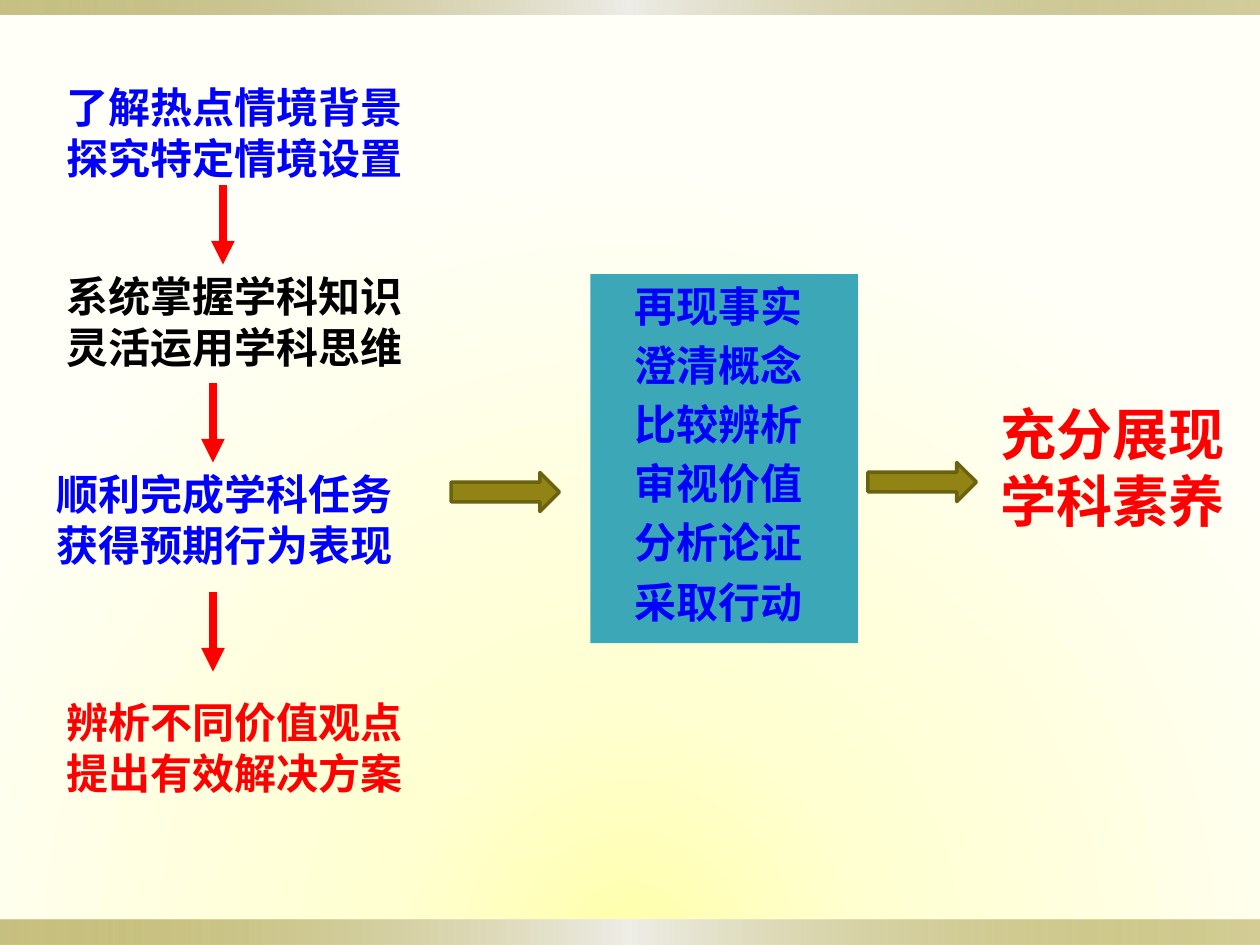
from dataclasses import dataclass
from typing import NamedTuple

from lxml.etree import SubElement
from pptx import Presentation
from pptx.dml.color import RGBColor
from pptx.enum.shapes import MSO_CONNECTOR as Connector, MSO_SHAPE as Shape
from pptx.enum.text import MSO_ANCHOR as Anchor, MSO_AUTO_SIZE as AutoSize, PP_ALIGN as Align
from pptx.oxml.ns import qn
from pptx.util import Pt


@dataclass(frozen=True)
class Theme:
    blue: str = "0000FF"
    red: str = "FF0000"
    black: str = "000000"
    teal: str = "3CA8B7"
    olive: str = "918415"
    dark_olive: str = "6B6210"
    silver: str = "EEEDE8"
    glow: tuple = ("FFFFAC", "FFFFD2", "FFFFF7")
    body: float = 24
    conclusion: float = 32
    font: str = "Arial"
    skill_font: str = "Noto Sans CJK SC"


class Box(NamedTuple):
    left: float
    top: float
    width: float
    height: float

    def lengths(self) -> list:
        return [Pt(value) for value in self]


class Stop(NamedTuple):
    position: int
    color: str
    opacity: int = 100


class Statement(NamedTuple):
    lines: tuple
    box: Box
    color: str
    size: float
    wrap: bool = True


class DownArrow(NamedTuple):
    x: float
    top: float


THEME = Theme()
WIDTH, HEIGHT = 720, 540
DOWN_LENGTH = 45.4

EDGE_BARS = (Box(0, 525.6, WIDTH, 14.4), Box(0, 0, WIDTH, 8.6))
BAR_STOPS = (Stop(0, THEME.olive, 50), Stop(50, THEME.silver), Stop(100, THEME.olive, 40))
GLOW_STOPS = tuple(map(Stop, (0, 31, 100), THEME.glow))
GLOW_CENTER = {"l": 50, "t": 150, "r": 50, "b": 0}

SKILLS = ("再现事实", "澄清概念", "比较辨析", "审视价值", "分析论证", "采取行动")
SKILL_BOX = Box(337.4, 156.7, 152.9, 210.8)

STATEMENTS = (
    Statement(("了解热点情境背景", "探究特定情境设置"),
              Box(31, 43.2, 209.5, 65.5), THEME.blue, THEME.body, False),
    Statement(("系统掌握学科知识", "灵活运用学科思维"),
              Box(31, 151.2, 232.6, 64.8), THEME.black, THEME.body),
    Statement(("顺利完成学科任务", "获得预期行为表现"),
              Box(25.2, 264.3, 215.3, 64.8), THEME.blue, THEME.body),
    Statement(("辨析不同价值观点", "提出有效解决方案"),
              Box(31, 394.6, 209.5, 94.3), THEME.red, THEME.body),
    Statement(("充分展现", "学科素养"),
              Box(564.5, 224.6, 143.3, 84.2), THEME.red, THEME.conclusion, False),
)
DOWN_ARROWS = (DownArrow(127.4, 105.8), DownArrow(121.7, 218.9), DownArrow(121.7, 338.4))
RIGHT_ARROWS = (Box(257.8, 270, 61.9, 22.3), Box(496, 264.3, 61.9, 22.3))


def rgb(color: str) -> RGBColor:
    return RGBColor.from_string(color)


def set_gradient(fill, owner, stops: tuple, center: dict | None = None) -> None:
    fill.gradient()
    gradient = next(owner.iter(qn("a:gradFill")))
    for child in list(gradient):
        gradient.remove(child)
    stop_list = SubElement(gradient, qn("a:gsLst"))
    for stop in stops:
        mark = SubElement(stop_list, qn("a:gs"), pos=str(stop.position * 1000))
        color = SubElement(mark, qn("a:srgbClr"), val=stop.color)
        if stop.opacity < 100:
            SubElement(color, qn("a:alpha"), val=str(stop.opacity * 1000))
    if center:
        circle = SubElement(gradient, qn("a:path"))
        circle.set("path", "circle")
        edges = {side: str(percent * 1000) for side, percent in center.items()}
        SubElement(circle, qn("a:fillToRect"), **edges)
    else:
        SubElement(gradient, qn("a:lin"), ang="0", scaled="1")


def add_panel(slide, kind: Shape, box: Box):
    panel = slide.shapes.add_shape(kind, *box.lengths())
    panel.shadow.inherit = False
    panel.line.fill.background()
    return panel


def write_lines(frame, lines: tuple, color: str, size: float, font: str,
                align: Align = Align.LEFT, gap: float = 0) -> None:
    frame.vertical_anchor = Anchor.TOP
    for index, line in enumerate(lines):
        paragraph = frame.paragraphs[0] if index == 0 else frame.add_paragraph()
        paragraph.text = line
        paragraph.alignment = align
        paragraph.space_after = Pt(gap)
        paragraph.font.name = font
        paragraph.font.size = Pt(size)
        paragraph.font.bold = True
        paragraph.font.color.rgb = rgb(color)


def add_edge_bar(slide, box: Box) -> None:
    bar = add_panel(slide, Shape.RECTANGLE, box)
    set_gradient(bar.fill, bar.element, BAR_STOPS)


def add_skills(slide) -> None:
    panel = add_panel(slide, Shape.RECTANGLE, SKILL_BOX)
    panel.fill.solid()
    panel.fill.fore_color.rgb = rgb(THEME.teal)
    panel.text_frame.margin_right = Pt(13.2)
    write_lines(panel.text_frame, SKILLS, THEME.blue, THEME.body,
                THEME.skill_font, Align.CENTER, gap=5)


def add_statement(slide, statement: Statement) -> None:
    frame = slide.shapes.add_textbox(*statement.box.lengths()).text_frame
    frame.word_wrap = statement.wrap
    frame.auto_size = AutoSize.SHAPE_TO_FIT_TEXT
    write_lines(frame, statement.lines, statement.color, statement.size, THEME.font)


def add_down_arrow(slide, arrow: DownArrow) -> None:
    x, top, bottom = Pt(arrow.x), Pt(arrow.top), Pt(arrow.top + DOWN_LENGTH)
    connector = slide.shapes.add_connector(Connector.STRAIGHT, x, top, x, bottom)
    connector.line.color.rgb = rgb(THEME.red)
    connector.line.width = Pt(4.5)
    SubElement(connector.line._get_or_add_ln(), qn("a:tailEnd"), type="triangle")
    SubElement(connector.element.spPr, qn("a:effectLst"))


def add_right_arrow(slide, box: Box) -> None:
    arrow = add_panel(slide, Shape.RIGHT_ARROW, box)
    arrow.fill.solid()
    arrow.fill.fore_color.rgb = rgb(THEME.olive)
    arrow.line.color.rgb = rgb(THEME.dark_olive)
    arrow.line.width = Pt(2)


def main() -> None:
    deck = Presentation()
    deck.slide_width, deck.slide_height = Pt(WIDTH), Pt(HEIGHT)
    slide = deck.slides.add_slide(deck.slide_layouts[6])
    set_gradient(slide.background.fill, slide.element, GLOW_STOPS, GLOW_CENTER)
    for bar in EDGE_BARS:
        add_edge_bar(slide, bar)
    add_skills(slide)
    for statement in STATEMENTS:
        add_statement(slide, statement)
    for down_arrow in DOWN_ARROWS:
        add_down_arrow(slide, down_arrow)
    for right_arrow in RIGHT_ARROWS:
        add_right_arrow(slide, right_arrow)
    deck.save("out.pptx")


if __name__ == "__main__":
    main()
